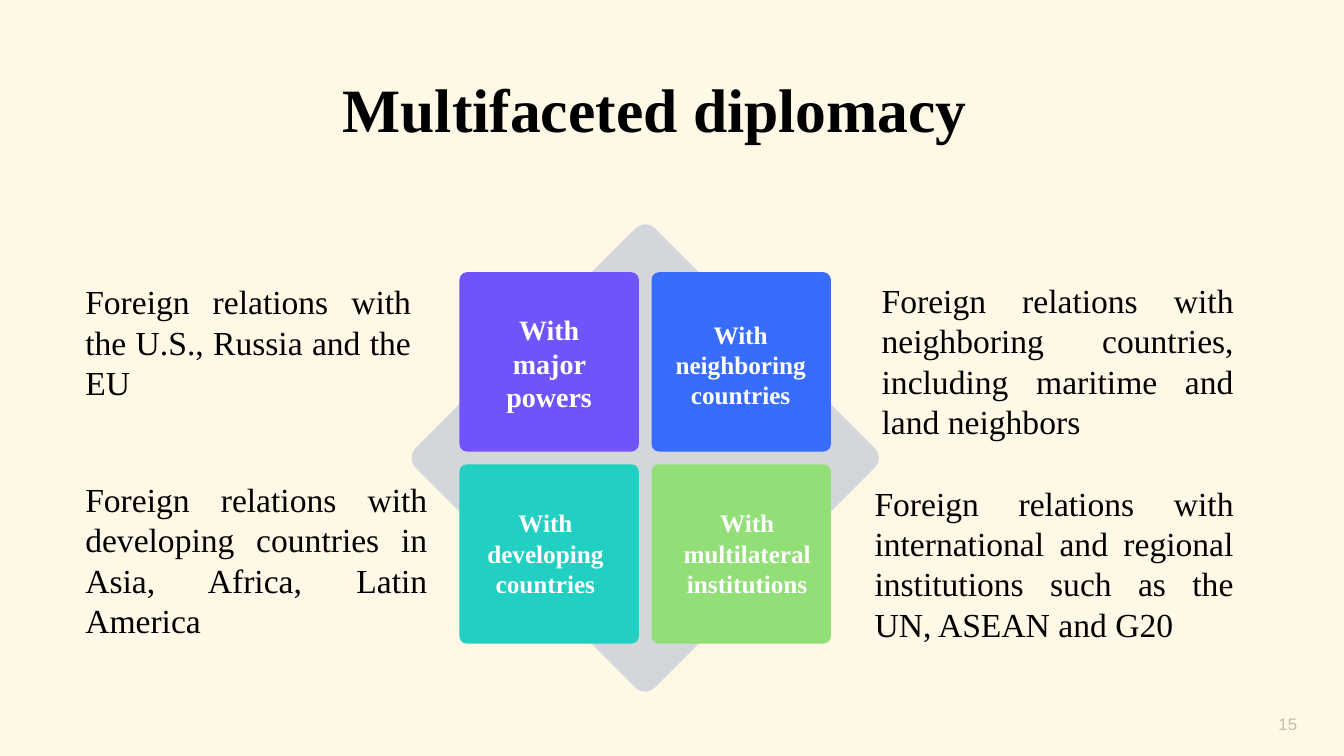
"""Build the slide on multifaceted diplomacy."""
from pptx import Presentation
from pptx.dml.color import RGBColor
from pptx.enum.shapes import MSO_SHAPE
from pptx.enum.text import MSO_ANCHOR, PP_ALIGN
from pptx.util import Cm, Pt

ROUNDED = MSO_SHAPE.ROUNDED_RECTANGLE
TOP, MIDDLE = MSO_ANCHOR.TOP, MSO_ANCHOR.MIDDLE
CENTER, RIGHT, JUSTIFY = PP_ALIGN.CENTER, PP_ALIGN.RIGHT, PP_ALIGN.JUSTIFY
SERIF, SANS = "Times New Roman", "Arial"
BLACK, WHITE, CREAM, GREY, MUTED = "000000", "FFFFFF", "FFF8E6", "D3D7DC", "C6BFAC"

TITLE_ONLY = 5
GRID_LEFT, GRID_TOP = 11.58, 6.86
TILE, PITCH = 4.52, 4.84
DIAMOND = 8.53
TILE_COLORS = ["7154F9", "386DFC", "21D0C2", "91DF76"]

LABELS = [
    ("With major powers", 20, (11.96, 7.75, 3.76, 2.82)),
    ("With neighboring countries", 18, (16.66, 7.92, 4.01, 2.57)),
    ("With developing countries", 18, (11.89, 12.67, 3.71, 2.57)),
    ("With multilateral institutions", 18, (16.71, 12.67, 4.24, 2.57)),
]
DESCRIPTIONS = [
    ("Foreign relations with the U.S., Russia and the EU",
     (1.9, 6.96, 8.71, 3.33)),
    ("Foreign relations with neighboring countries, including maritime and land neighbors",
     (21.97, 6.93, 9.37, 4.37)),
    ("Foreign relations with developing countries in Asia, Africa, Latin America",
     (1.9, 11.94, 9.12, 4.37)),
    ("Foreign relations with international and regional institutions such as the UN, ASEAN and G20",
     (21.79, 12.04, 9.55, 4.37)),
]


def color(value):
    """Return the colour for a hex string."""
    return RGBColor.from_string(value)


def write(shape, text, size, ink, align, bold=False, font=SERIF, anchor=TOP):
    """Write one formatted run into a shape."""
    frame = shape.text_frame
    frame.word_wrap = True
    frame.vertical_anchor = anchor
    paragraph = frame.paragraphs[0]
    paragraph.alignment = align
    run = paragraph.add_run()
    run.text = text
    run.font.name = font
    run.font.size = Pt(size)
    run.font.bold = bold
    run.font.color.rgb = color(ink)


def add_title(slide, text):
    """Place and format the title placeholder."""
    title = slide.shapes.title
    title.left, title.top = Cm(2.87), Cm(1.65)
    title.width, title.height = Cm(27.28), Cm(2.13)
    write(title, text, 44, BLACK, CENTER, bold=True)


def add_text(slide, box, text, size, ink, align, **style):
    """Add a text box at left, top, width, height in centimetres."""
    shape = slide.shapes.add_textbox(*map(Cm, box))
    write(shape, text, size, ink, align, **style)


def add_square(slide, left, top, side, fill, rotation=0):
    """Add a borderless square with slightly rounded corners."""
    shape = slide.shapes.add_shape(ROUNDED, Cm(left), Cm(top), Cm(side), Cm(side))
    shape.adjustments[0] = 0.041
    shape.rotation = rotation
    shape.shadow.inherit = False
    shape.fill.solid()
    shape.fill.fore_color.rgb = color(fill)
    shape.line.fill.background()


def add_matrix(slide):
    """Add the diamond and the four tiles centred on it."""
    inset = (PITCH + TILE - DIAMOND) / 2
    add_square(slide, GRID_LEFT + inset, GRID_TOP + inset, DIAMOND, GREY, 45)
    for index, fill in enumerate(TILE_COLORS):
        row, column = divmod(index, 2)
        add_square(slide, GRID_LEFT + column * PITCH, GRID_TOP + row * PITCH, TILE, fill)


def main():
    """Build and save the presentation."""
    presentation = Presentation()
    presentation.slide_width, presentation.slide_height = Cm(33.87), Cm(19.05)
    slide = presentation.slides.add_slide(presentation.slide_layouts[TITLE_ONLY])
    slide.background.fill.solid()
    slide.background.fill.fore_color.rgb = color(CREAM)

    add_title(slide, "Multifaceted diplomacy")
    add_matrix(slide)
    for text, size, box in LABELS:
        add_text(slide, box, text, size, WHITE, CENTER, bold=True)
    for text, box in DESCRIPTIONS:
        add_text(slide, box, text, 24, BLACK, JUSTIFY)
    add_text(slide, (25.32, 17.73, 7.62, 1.02), "15", 12, MUTED, RIGHT,
             font=SANS, anchor=MIDDLE)
    presentation.save("out.pptx")


if __name__ == "__main__":
    main()
